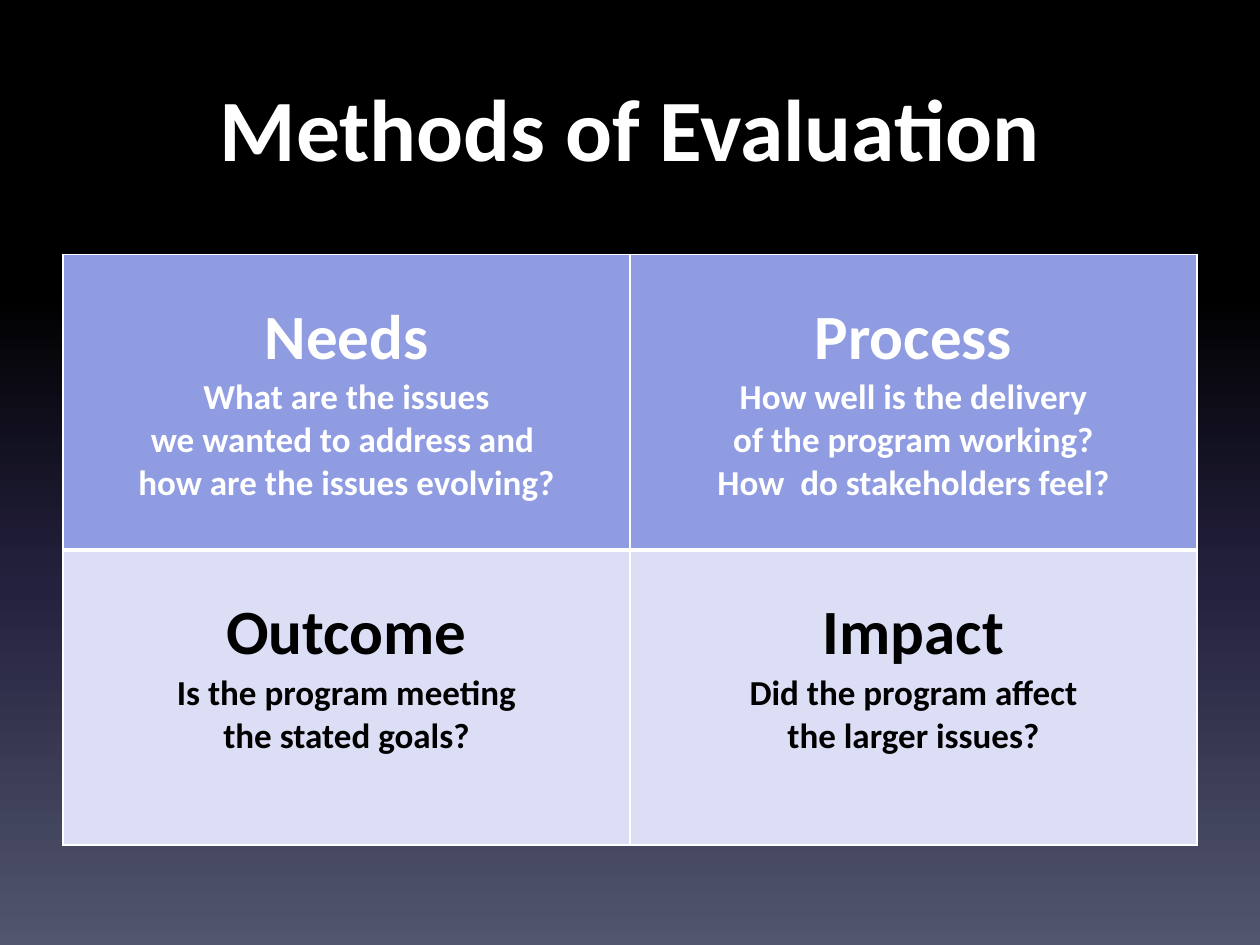
import pptx
import pptx.util
import pptx.dml.color
import pptx.enum.text
import pptx.oxml
import pptx.oxml.ns

Pt = pptx.util.Pt
RGB = pptx.dml.color.RGBColor.from_string
qn = pptx.oxml.ns.qn
NS = pptx.oxml.ns.nsdecls("a")

hues = {
    "white": "FFFFFF",
    "black": "000000",
    "navy": "24213E",
    "slate": "51566D",
    "blue": "909CE1",
    "pale": "DBDEF4",
}


def write(frame, text, size=20, hue="white", first=False):
    para = frame.paragraphs[0] if first else frame.add_paragraph()
    para.alignment = pptx.enum.text.PP_ALIGN.CENTER
    run = para.add_run()
    run.text = text
    run.font.name = "Calibri"
    run.font.size = Pt(size)
    run.font.bold = True
    run.font.color.rgb = RGB(hues[hue])


def edge(cell, side, width):
    line = pptx.oxml.parse_xml(
        f'<a:{side} {NS} w="{Pt(width)}"><a:solidFill>'
        f'<a:srgbClr val="{hues["white"]}"/></a:solidFill></a:{side}>'
    )
    props = cell._tc.get_or_add_tcPr()
    props.insert(len(props.findall("*")) - 1, line)


deck = pptx.Presentation()
deck.slide_width, deck.slide_height = Pt(720), Pt(540)
slide = deck.slides.add_slide(deck.slide_layouts[6])

back = slide.background.fill
back.gradient()
back.gradient_angle = 270
stops = slide.element.find(".//" + qn("a:gsLst"))
for stop in list(stops):
    stops.remove(stop)
for pos, hue in [(0, "black"), (31, "black"), (62, "navy"), (100, "slate")]:
    stops.append(pptx.oxml.parse_xml(
        f'<a:gs {NS} pos="{pos * 1000}"><a:srgbClr val="{hues[hue]}"/></a:gs>'
    ))

title = slide.shapes.add_textbox(Pt(36), Pt(36), Pt(648), Pt(90)).text_frame
title.word_wrap = True
title.margin_top = Pt(6)
write(title, "Methods of Evaluation", size=50, first=True)

rows = [
    ("blue", "white", 3, [
        ("Needs", "What are the issues", "we wanted to address and ",
         "how are the issues evolving?"),
        ("Process", "How well is the delivery", "of the program working?",
         "How  do stakeholders feel?"),
    ]),
    ("pale", "black", 1, [
        ("Outcome", "Is the program meeting", "the stated goals?"),
        ("Impact", "Did the program affect", "the larger issues?"),
    ]),
]
grid = slide.shapes.add_table(2, 2, Pt(36), Pt(145.5), Pt(648), Pt(337.5)).table
for r, (fill, ink, base, cells) in enumerate(rows):
    for c, (head, *lines) in enumerate(cells):
        cell = grid.cell(r, c)
        cell.margin_top = Pt(25.6)
        cell.fill.solid()
        cell.fill.fore_color.rgb = RGB(hues[fill])
        top = rows[r - 1][2] if r else 1
        for side, width in [("lnL", 1), ("lnR", 1), ("lnT", top), ("lnB", base)]:
            edge(cell, side, width)
        write(cell.text_frame, head, size=36, hue=ink, first=True)
        for line in lines:
            write(cell.text_frame, line, hue=ink)

deck.save("out.pptx")
